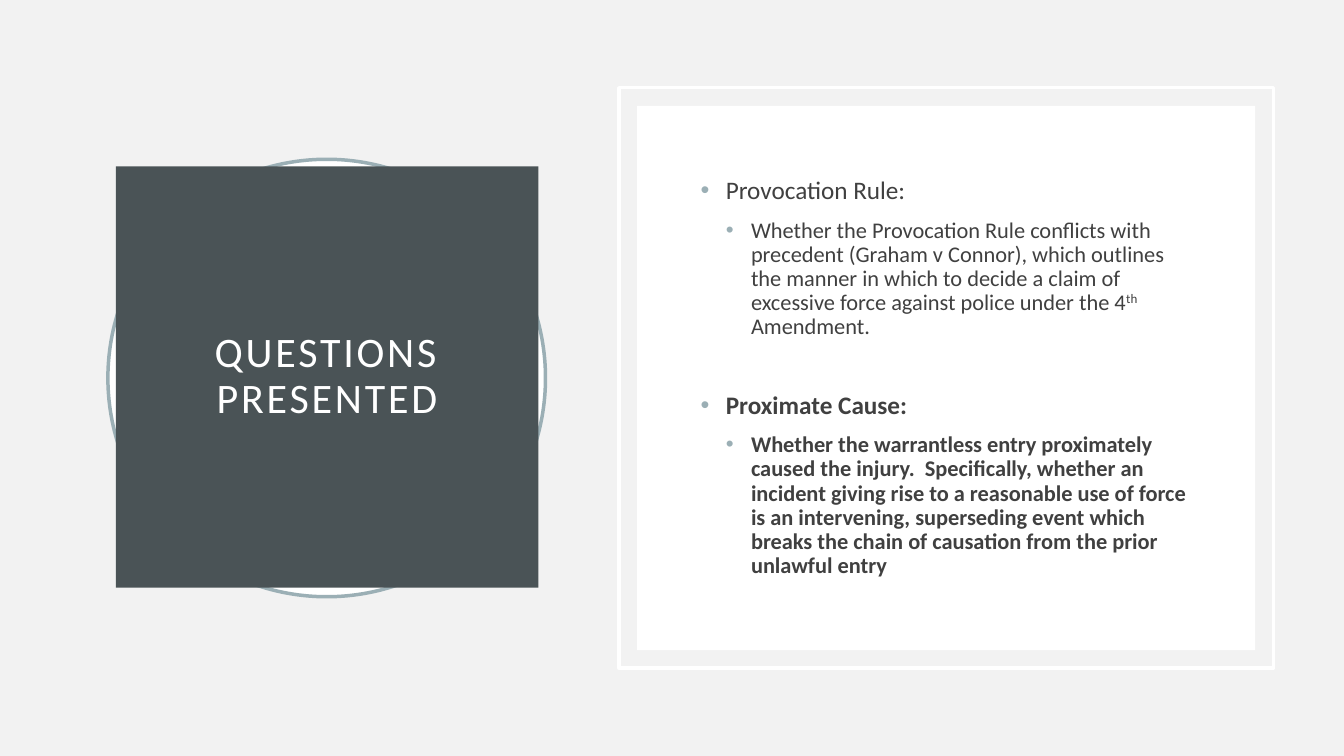
"""Build the slide of questions presented: a title block beside a framed list."""
import dataclasses
import typing

import lxml.etree
import pptx
import pptx.dml.color
import pptx.enum.shapes
import pptx.enum.text
import pptx.oxml.ns
import pptx.util

RGB = pptx.dml.color.RGBColor
WHITE = RGB(0xFF, 0xFF, 0xFF)
PALE = RGB(0xF2, 0xF2, 0xF2)
SLATE = RGB(0x4A, 0x53, 0x56)
MIST = RGB(0x9B, 0xAF, 0xB5)
INK = RGB(0x40, 0x40, 0x40)
WIDE, HIGH = pptx.util.Inches(13.33), pptx.util.Inches(7.5)
KIND = pptx.enum.shapes.MSO_SHAPE
MIDDLE = pptx.enum.text.MSO_ANCHOR.MIDDLE
CENTER = pptx.enum.text.PP_ALIGN.CENTER
INDENT = pptx.util.Inches(0.25)


class Box(typing.NamedTuple):
    """Left, top, width and height in percent of the slide."""
    left: float
    top: float
    width: float
    height: float

    def place(self) -> tuple[int, ...]:
        """Return the box in slide units."""
        return tuple(round(part * side / 100) for part, side in zip(self, (WIDE, HIGH) * 2))


@dataclasses.dataclass(frozen=True)
class Panel:
    """A plain shape with an optional fill and line."""
    kind: KIND
    box: Box
    fill: RGB | None = None
    line: RGB | None = None


@dataclasses.dataclass(frozen=True)
class Item:
    """A list entry: its text runs, level, weight and gap above in points."""
    runs: tuple[str, ...]
    level: int = 0
    bold: bool = False
    gap: float = 10


RING = Panel(KIND.OVAL, Box(8.03, 21.07, 32.56, 57.87), WHITE, MIST)
FRAME = Panel(KIND.RECTANGLE, Box(46.06, 11.6, 48.69, 76.8), line=WHITE)
SHEET = Panel(KIND.RECTANGLE, Box(47.41, 14, 45.99, 72), WHITE)
BLOCK = Panel(KIND.RECTANGLE, Box(8.63, 22, 31.43, 55.73), SLATE)
BODY = Box(51.39, 21.07, 38.18, 57.87)
RAISED = "th"
ITEMS = (
    Item(("Provocation Rule:",)),
    Item(("Whether the Provocation Rule conflicts with precedent (Graham v Connor), "
          "which outlines the manner in which to decide a claim of excessive force "
          "against police under the 4", RAISED, " Amendment."), level=1),
    Item(("Proximate Cause:",), bold=True, gap=37.6),
    Item(("Whether the warrantless entry proximately caused the injury.  Specifically, "
          "whether an incident giving rise to a reasonable use of force is an "
          "intervening, superseding event which breaks the chain of causation from "
          "the prior unlawful entry",), level=1, bold=True),
)


def apply(target: typing.Any, values: dict[str, typing.Any]) -> None:
    """Set each named value on the target."""
    for name, value in values.items():
        setattr(target, name, value)


def style(font: typing.Any, size: float, tint: RGB, bold: bool = False) -> None:
    """Set the face, size, weight and tint of a font."""
    apply(font, {"name": "Calibri", "size": pptx.util.Pt(size), "bold": bold})
    font.color.rgb = tint


def draw(slide: typing.Any, panel: Panel) -> typing.Any:
    """Draw one panel and return its shape."""
    shape = slide.shapes.add_shape(panel.kind, *panel.box.place())
    shape.shadow.inherit = False
    for paint, tint in ((shape.fill, panel.fill), (shape.line.fill, panel.line)):
        if tint is None:
            paint.background()
        else:
            paint.solid()
            paint.fore_color.rgb = tint
    if panel.line is not None:
        shape.line.width = pptx.util.Pt(2.5)
    return shape


def label(slide: typing.Any) -> None:
    """Draw the title block and its words."""
    frame = draw(slide, BLOCK).text_frame
    inset = pptx.util.Inches(0.2)
    sides = ("left", "top", "right", "bottom")
    apply(frame, {f"margin_{side}": inset for side in sides})
    apply(frame, {"word_wrap": True, "vertical_anchor": MIDDLE})
    para = frame.paragraphs[0]
    apply(para, {"alignment": CENTER, "line_spacing": 0.9})
    run = para.add_run()
    run.text = "QUESTIONS PRESENTED"
    style(run.font, 30, WHITE)
    run.font._element.set("spc", "200")


def bullet(para: typing.Any, level: int) -> None:
    """Give a paragraph its hanging indent and tinted bullet."""
    tag = pptx.oxml.ns.qn
    props = para._p.get_or_add_pPr()
    props.set("marL", str(INDENT * (level + 1)))
    props.set("indent", str(-INDENT))
    tint = lxml.etree.SubElement(props, tag("a:buClr"))
    lxml.etree.SubElement(tint, tag("a:srgbClr"), val=str(MIST))
    lxml.etree.SubElement(props, tag("a:buFont"), typeface="Arial")
    lxml.etree.SubElement(props, tag("a:buChar"), char="•")


def write(slide: typing.Any) -> None:
    """Write the list of questions."""
    frame = slide.shapes.add_textbox(*BODY.place()).text_frame
    apply(frame, {"word_wrap": True, "vertical_anchor": MIDDLE})
    for index, item in enumerate(ITEMS):
        para = frame.add_paragraph() if index else frame.paragraphs[0]
        apply(para, {"level": item.level, "line_spacing": 0.9,
                     "space_before": pptx.util.Pt(item.gap)})
        bullet(para, item.level)
        for words in item.runs:
            run = para.add_run()
            run.text = words
            style(run.font, 18 - 2 * item.level, INK, item.bold)
            if words == RAISED:
                run.font._element.set("baseline", "30000")


def main() -> None:
    """Build and save the slide."""
    deck = pptx.Presentation()
    apply(deck, {"slide_width": WIDE, "slide_height": HIGH})
    slide = deck.slides.add_slide(deck.slide_layouts[6])
    ground = slide.background.fill
    ground.solid()
    ground.fore_color.rgb = PALE
    for panel in (RING, FRAME, SHEET):
        draw(slide, panel)
    label(slide)
    write(slide)
    deck.save("out.pptx")


if __name__ == "__main__":
    main()
